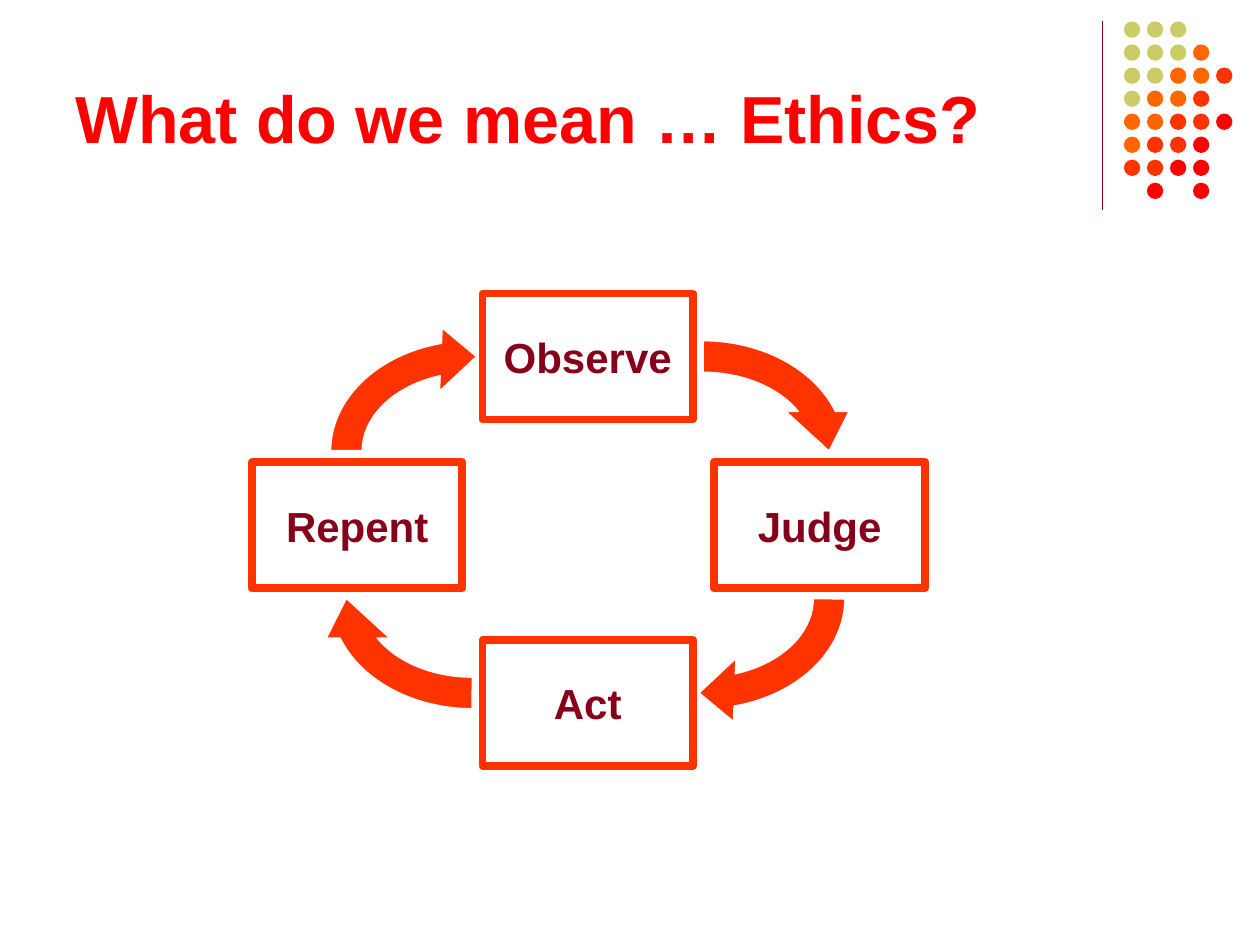
"""Build the ethics cycle slide: four boxed steps joined by curved arrows."""
from dataclasses import dataclass

from lxml import etree
from pptx import Presentation
from pptx import util as u
from pptx.dml.color import RGBColor
from pptx.enum import shapes, text
from pptx.oxml import ns

ACCENT = "FF3300"
MAROON = "86001A"
RED = "FF0000"
WHITE = "FFFFFF"

DOT_COLOURS = {"g": "CCCC66", "o": "FF6600", "r": ACCENT, "x": RED}
DOT_ROWS = ("ggg", "gggo", "ggoor", "goor", "oorrx", "orrx", "rrxx", ".x.x")
DOT_LEFT, DOT_TOP, DOT_SIZE = 8.92, 0.17, 0.13
DOT_PITCH = (1.45 - DOT_TOP) / (len(DOT_ROWS) - 1)


@dataclass(frozen=True)
class Step:
    label: str
    left: float
    top: float


@dataclass(frozen=True)
class CurvedArrow:
    left: float
    top: float
    upright: bool = False
    flipped: bool = False


STEPS = (
    Step("Observe", 3.83, 2.33),
    Step("Judge", 5.67, 3.67),
    Step("Act", 3.83, 5.08),
    Step("Repent", 2, 3.67),
)
ARROWS = (
    CurvedArrow(4.33, 2.58),
    CurvedArrow(4.58, 3.5, upright=True),
    CurvedArrow(2.5, 3.75, flipped=True),
    CurvedArrow(2.75, 2.33, upright=True, flipped=True),
)


def colour(value: str) -> RGBColor:
    return RGBColor.from_string(value)


def write_text(shape, words: str, *, size: float, ink: str, anchor, align) -> None:
    frame = shape.text_frame
    frame.word_wrap = True
    frame.vertical_anchor = anchor
    paragraph = frame.paragraphs[0]
    paragraph.text = words
    paragraph.alignment = align
    font = paragraph.font
    font.name, font.size, font.bold = "Arial", u.Pt(size), True
    font.color.rgb = colour(ink)


def add_preset(parent, kind, left: float, top: float, width: float, height: float,
               *, fill: str | None = None, line: str | None = None, weight: float = 0.75):
    shape = parent.shapes.add_shape(
        kind, u.Inches(left), u.Inches(top), u.Inches(width), u.Inches(height))
    shape.shadow.inherit = False
    if fill:
        shape.fill.solid()
        shape.fill.fore_color.rgb = colour(fill)
    else:
        shape.fill.background()
    if line:
        shape.line.color.rgb = colour(line)
        shape.line.width = u.Pt(weight)
    else:
        shape.line.fill.background()
    return shape


def draw_divider(slide) -> None:
    divider = slide.shapes.add_connector(
        shapes.MSO_CONNECTOR.STRAIGHT,
        u.Inches(8.75), u.Inches(0.17), u.Inches(8.75), u.Inches(1.67))
    divider.line.color.rgb = colour(MAROON)
    divider.line.width = u.Pt(0.75)
    etree.SubElement(divider._element.spPr, ns.qn("a:effectLst"))


def draw_dots(slide) -> None:
    group = slide.shapes.add_group_shape()
    for row, codes in enumerate(DOT_ROWS):
        for column, code in enumerate(codes):
            if code in DOT_COLOURS:
                add_preset(group, shapes.MSO_SHAPE.OVAL,
                           DOT_LEFT + column * DOT_PITCH, DOT_TOP + row * DOT_PITCH,
                           DOT_SIZE, DOT_SIZE, fill=DOT_COLOURS[code])


def draw_title(slide) -> None:
    title = slide.shapes.add_textbox(
        u.Inches(0.5), u.Inches(0.42), u.Inches(8.17), u.Inches(0.87))
    write_text(title, "What do we mean … Ethics?", size=38, ink=RED,
               anchor=text.MSO_ANCHOR.BOTTOM, align=text.PP_ALIGN.LEFT)


def draw_step(slide, step: Step) -> None:
    box = add_preset(slide, shapes.MSO_SHAPE.RECTANGLE, step.left, step.top, 1.67, 1,
                     line=ACCENT, weight=4.5)
    etree.SubElement(box.line._get_or_add_ln(), ns.qn("a:round"))
    write_text(box, step.label, size=24, ink=MAROON,
               anchor=text.MSO_ANCHOR.MIDDLE, align=text.PP_ALIGN.CENTER)


def draw_arrow(slide, arrow: CurvedArrow) -> None:
    width, height = (2, 2.5) if arrow.upright else (2.5, 2)
    shape = add_preset(slide, shapes.MSO_SHAPE.CIRCULAR_ARROW, arrow.left, arrow.top,
                       width, height, fill=ACCENT, line=WHITE)
    head_angle = 12.84 if arrow.upright else 11.42
    for index, value in enumerate((0.125, head_angle, 204.58, 162.11, 0.125)):
        shape.adjustments[index] = value
    shape.rotation = 90 if arrow.upright else 0
    if arrow.flipped:
        transform = shape._element.spPr.find(ns.qn("a:xfrm"))
        transform.set("flipH", "1")
        transform.set("flipV", "1")


def main() -> None:
    presentation = Presentation()
    presentation.slide_width, presentation.slide_height = u.Inches(10), u.Inches(7.5)
    slide = presentation.slides.add_slide(presentation.slide_layouts[6])
    slide.background.fill.solid()
    slide.background.fill.fore_color.rgb = colour(WHITE)
    draw_divider(slide)
    draw_dots(slide)
    draw_title(slide)
    for step in STEPS:
        draw_step(slide, step)
    for arrow in ARROWS:
        draw_arrow(slide, arrow)
    presentation.save("out.pptx")


if __name__ == "__main__":
    main()
